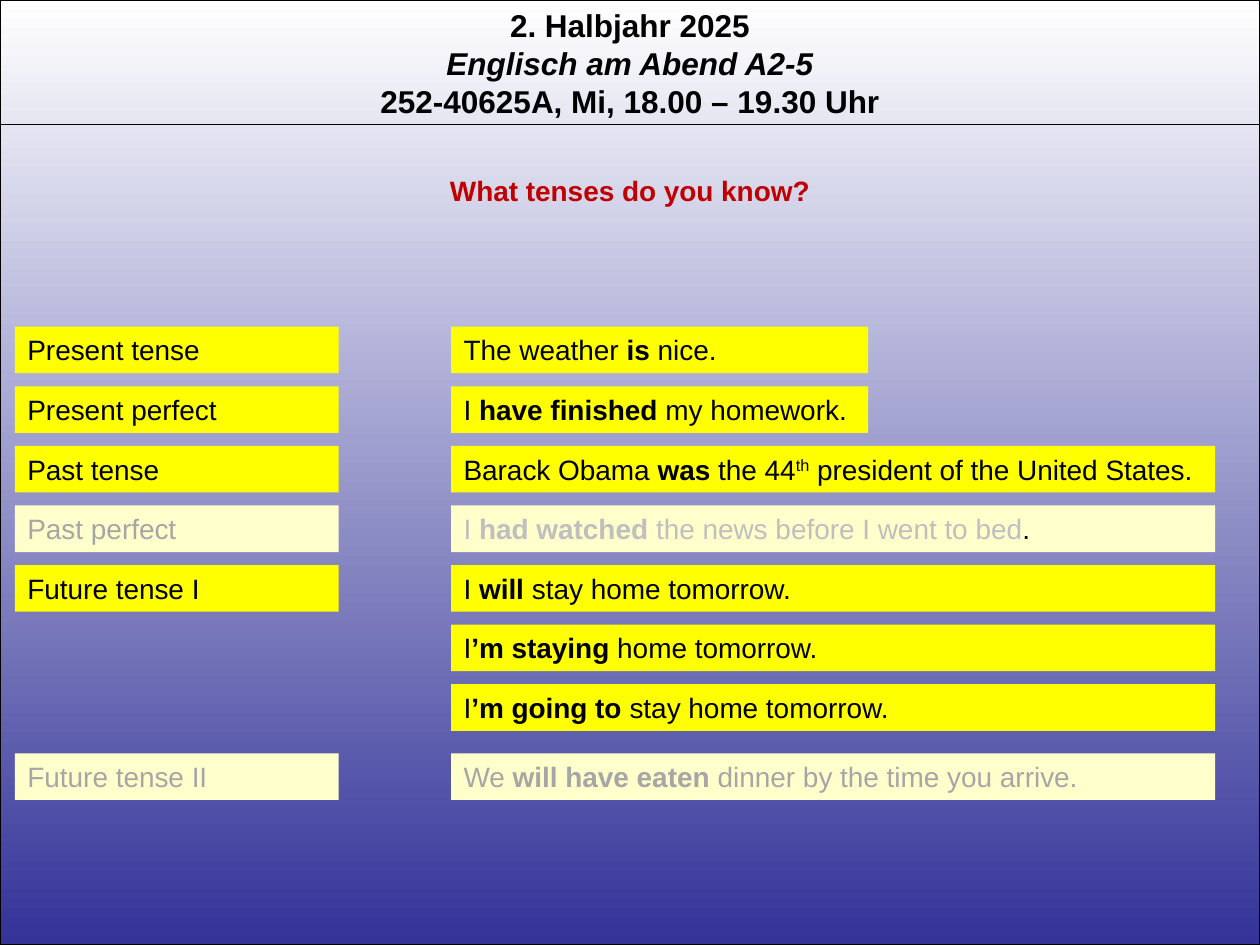
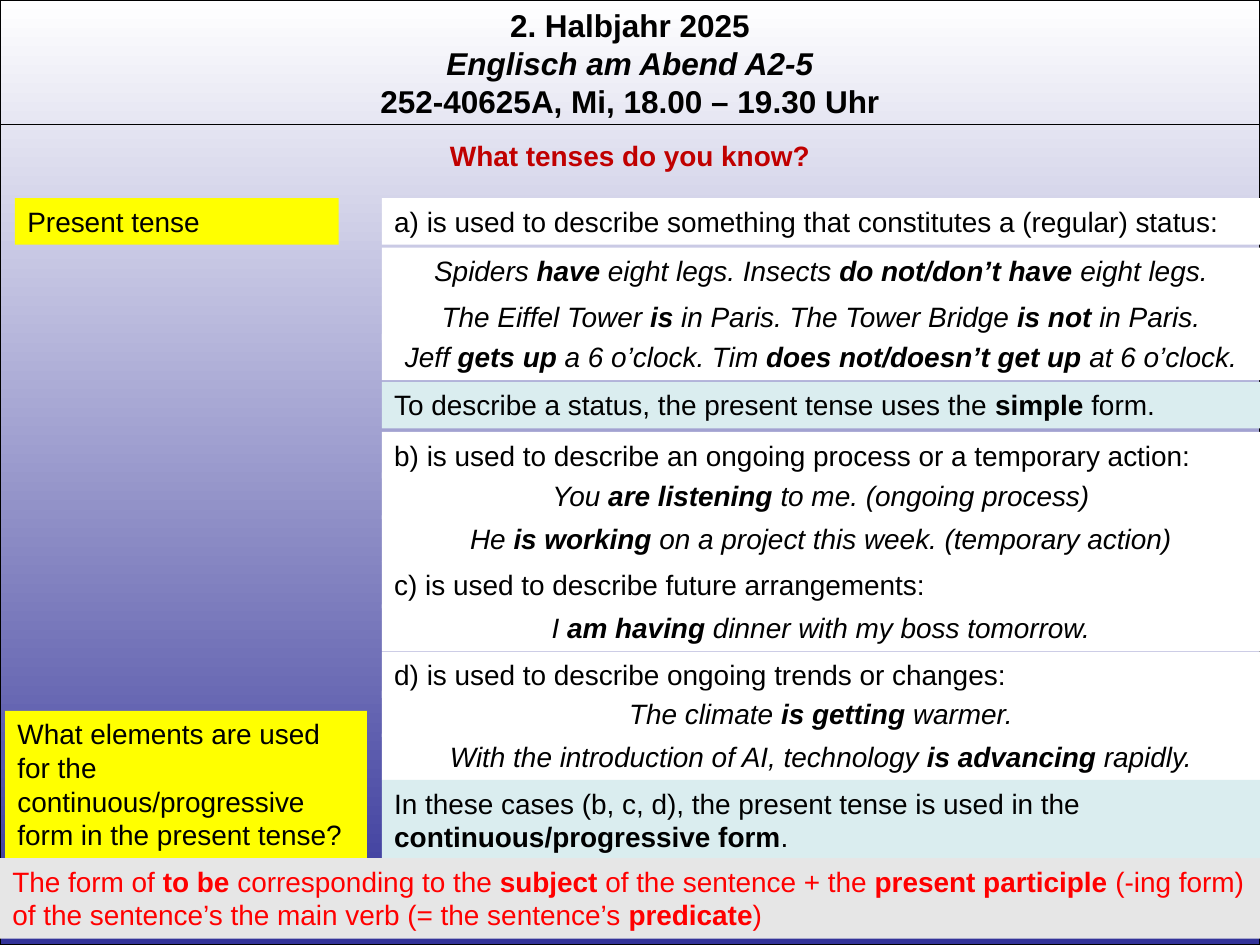
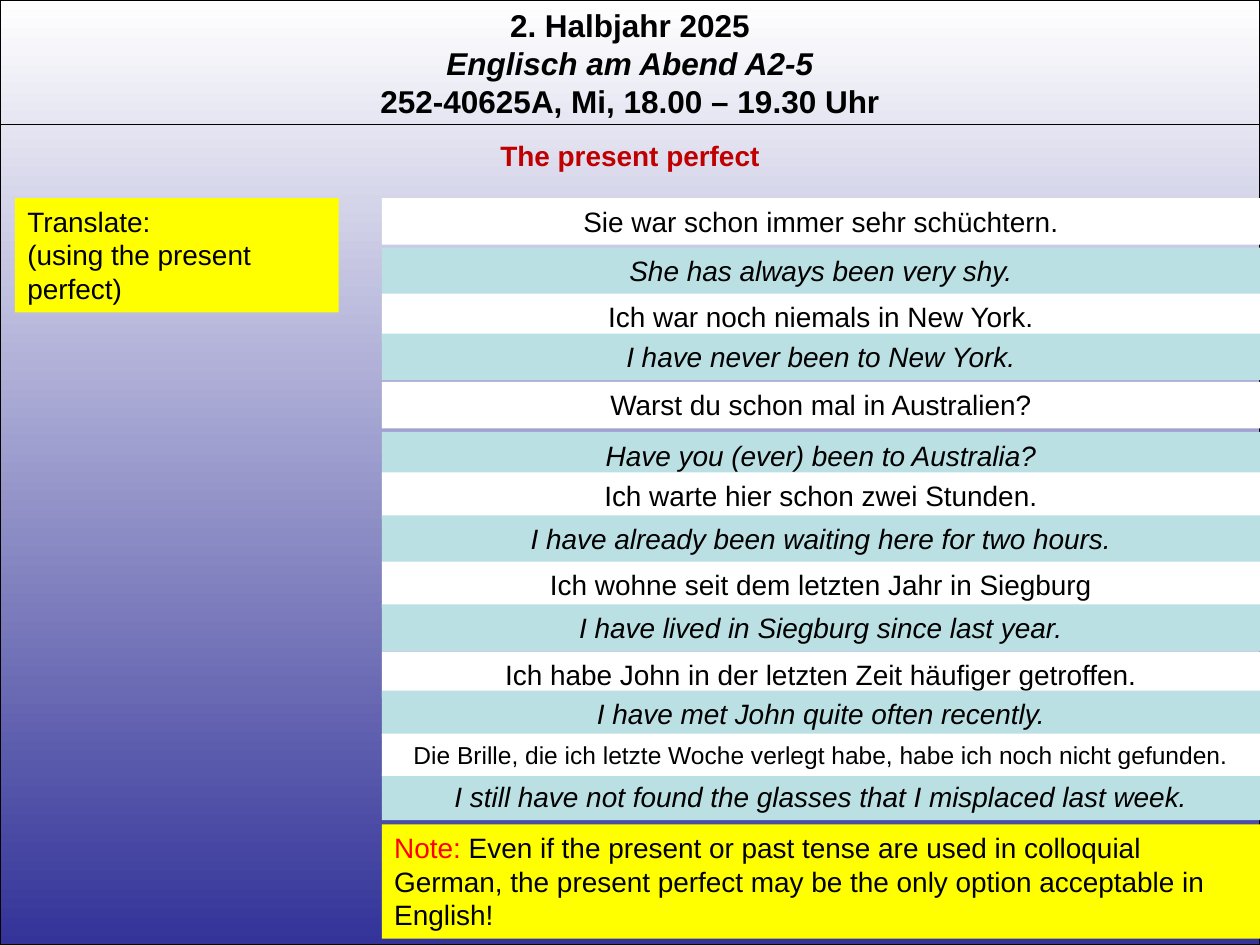
"""Build three slides about English tenses for an evening class."""
from dataclasses import dataclass
from typing import Iterator, Optional

from lxml import etree
from pptx import Presentation
from pptx import util as u
from pptx.dml.color import RGBColor
from pptx.enum import shapes, text
from pptx.oxml.ns import qn
from pptx.slide import Slide

WIDTH, HEIGHT = 720, 540
FONT = "Arial"
BLACK, WHITE, RED, DARK_RED = "000000", "FFFFFF", "FF0000", "C00000"
NAVY, YELLOW, PALE_YELLOW = "333399", "FFFF00", "FFFFCC"
GREY, LIGHT_GREY, SILVER = "A6A6A6", "BFBFBF", "E6E6E6"
TEAL, PALE_TEAL = "BBE0E3", "DAEDEF"
BOLD, RAISED, ACCENT = "*", "^", "~"

ONE_LINE, TWO_LINES, THREE_LINES, FOUR_LINES = 26.65, 46.05, 65.4, 84.8
LABEL_LEFT, LABEL_WIDTH = 8.6, 185
EXAMPLE_LEFT, SHORT_EXAMPLE, LONG_EXAMPLE = 257.8, 238.3, 436.5
FIRST_TENSE_TOP, TENSE_STEP, LAST_TENSE_TOP = 186.7, 34.05, 430.5
RULE_LEFT, RULE_WIDTH = 218.2, 501.8
RULE_TOPS = (113.2, 141.6, 167.8, 190.6, 218.2, 246.8, 270, 294.5,
             321, 345.4, 372.2, 394.7, 419.2)
COURSE = "2. Halbjahr 2025\nEnglisch am Abend A2-5\n252-40625A, Mi, 18.00 – 19.30 Uhr"


@dataclass(frozen=True)
class Box:
    """A text panel; marks in the wording switch bold, raised and accent."""

    left: float
    top: float
    width: float
    height: float
    wording: str
    fill: Optional[str] = YELLOW
    color: str = BLACK
    accent: str = BLACK
    size: float = 16
    centred: bool = False
    bold: bool = False
    italic: bool = False


@dataclass(frozen=True)
class Tense:
    """A tense name with its example sentence."""

    name: str
    example: str
    width: float = LONG_EXAMPLE
    faded: Optional[str] = None


@dataclass(frozen=True)
class Rule:
    """A row of the right-hand column."""

    wording: str
    fill: str = WHITE
    centred: bool = True
    italic: bool = False
    size: float = 16


TENSES = (
    Tense("Present tense", "The weather *is* nice.", SHORT_EXAMPLE),
    Tense("Present perfect", "I *have finished *my homework.", SHORT_EXAMPLE),
    Tense("Past tense", "Barack Obama *was* the 44^th^ president of the United States."),
    Tense("Past perfect", "I *had watched *the news before I went to bed~.", faded=LIGHT_GREY),
    Tense("Future tense I", "I *will *stay home tomorrow."),
    Tense("", "I*’m staying *home tomorrow."),
    Tense("", "I*’m going to *stay home tomorrow."),
    Tense("Future tense II", "We *will have eaten *dinner by the time you arrive.", faded=GREY),
)


def use(wording: str) -> Rule:
    """Describe a use of the present tense."""
    return Rule(wording, centred=False)


def example(wording: str) -> Rule:
    """Describe an example of a use."""
    return Rule(wording, italic=True)


USES = (
    use("a) is used to describe something that constitutes a (regular) status:"),
    example("Spiders *have* eight legs. Insects *do not/don’t have *eight legs."),
    example("The Eiffel Tower *is* in Paris. The Tower Bridge *is not *in Paris."),
    example("Jeff *gets up *a 6 o’clock. Tim *does not/doesn’t get up *at 6 o’clock."),
    Rule("To describe a status, the present tense uses the *simple* form.", PALE_TEAL, False),
    use("b) is used to describe an ongoing process or a temporary action:"),
    example("You *are listening *to me. (ongoing process)"),
    example("He *is working *on a project this week. (temporary action)"),
    use("c) is used to describe future arrangements:"),
    example("I *am having *dinner with my boss tomorrow."),
    use("d) is used to describe ongoing trends or changes:"),
    example("The climate *is getting *warmer."),
    example("With the introduction of AI, technology *is advancing *rapidly."),
)

TRANSLATIONS = (
    ("Sie war schon immer sehr schüchtern.", "She has always been very shy."),
    ("Ich war noch niemals in New York.", "I have never been to New York."),
    ("Warst du schon mal in Australien?", "Have you (ever) been to Australia?"),
    ("Ich warte hier schon zwei Stunden.", "I have already been waiting here for two hours."),
    ("Ich wohne seit dem letzten Jahr in Siegburg", "I have lived in Siegburg since last year."),
    ("Ich habe John in der letzten Zeit häufiger getroffen.",
     "I have met John quite often recently."),
)
LAST_GERMAN = "Die Brille, die ich letzte Woche verlegt habe, habe ich noch nicht gefunden."
LAST_ENGLISH = "I still have not found the glasses that I misplaced last week."


def rgb(color: str) -> RGBColor:
    """Turn a hex string into a colour."""
    return RGBColor.from_string(color)


def split_marks(line: str) -> Iterator[tuple[str, set[str]]]:
    """Yield each stretch of a line with the marks active on it."""
    active: set[str] = set()
    stretch = ""
    for char in line + BOLD:
        if char not in (BOLD, RAISED, ACCENT):
            stretch += char
            continue
        if stretch:
            yield stretch, set(active)
        stretch = ""
        active ^= {char}


def draw_box(page: Slide, box: Box) -> text:
    """Draw a panel, or plain text when it has no fill, and return its frame."""
    bounds = [u.Pt(n) for n in (box.left, box.top, box.width, box.height)]
    if box.fill:
        shape = page.shapes.add_shape(shapes.MSO_SHAPE.RECTANGLE, *bounds)
        shape.shadow.inherit = False
        shape.fill.solid()
        shape.fill.fore_color.rgb = rgb(box.fill)
        shape.line.fill.background()
    else:
        shape = page.shapes.add_textbox(*bounds)
    frame = shape.text_frame
    frame.word_wrap = True
    frame.auto_size = text.MSO_AUTO_SIZE.SHAPE_TO_FIT_TEXT
    frame.vertical_anchor = text.MSO_ANCHOR.TOP
    frame.text = "\n".join("" for _ in box.wording.split("\n"))
    for para, line in zip(frame.paragraphs, box.wording.split("\n")):
        para.alignment = text.PP_ALIGN.CENTER if box.centred else text.PP_ALIGN.LEFT
        for wording, marks in split_marks(line):
            span = para.add_run()
            span.text = wording
            span.font.name = FONT
            span.font.size = u.Pt(box.size)
            span.font.bold = box.bold or BOLD in marks
            span.font.italic = box.italic
            span.font.color.rgb = rgb(box.accent if ACCENT in marks else box.color)
            if RAISED in marks:
                span._r.get_or_add_rPr().set("baseline", "30000")
    return frame


def add_page(deck: Presentation, heading: str, heading_top: float) -> Slide:
    """Add a slide with the gradient, the course header and a heading."""
    page = deck.slides.add_slide(deck.slide_layouts[6])
    backdrop = page.shapes.add_shape(
        shapes.MSO_SHAPE.RECTANGLE, 0, 0, u.Pt(WIDTH), u.Pt(HEIGHT))
    backdrop.shadow.inherit = False
    backdrop.fill.gradient()
    backdrop.fill.gradient_angle = 270
    for stop, color in zip(backdrop.fill.gradient_stops, (WHITE, NAVY)):
        stop.color.rgb = rgb(color)
    header = draw_box(page, Box(0, 0, WIDTH, 72.7, COURSE, None, size=18,
                                centred=True, bold=True))
    header.paragraphs[1].runs[0].font.italic = True
    divider = page.shapes.add_connector(
        shapes.MSO_CONNECTOR.STRAIGHT, 0, u.Pt(71.3), u.Pt(WIDTH), u.Pt(71.3))
    etree.SubElement(divider._element.spPr, qn("a:effectLst"))
    for outline in (backdrop.line, divider.line):
        outline.color.rgb = rgb(BLACK)
        outline.width = u.Pt(0.75)
    draw_box(page, Box(0, heading_top, WIDTH, ONE_LINE, heading, None, DARK_RED,
                       centred=True, bold=True))
    return page


def draw_rule(page: Slide, top: float, rule: Rule, height: float = ONE_LINE) -> None:
    """Draw one row of the right-hand column."""
    draw_box(page, Box(RULE_LEFT, top, RULE_WIDTH, height, rule.wording, rule.fill,
                       size=rule.size, centred=rule.centred, italic=rule.italic))


def draw_label(page: Slide, top: float, wording: str, height: float = ONE_LINE,
               fill: str = YELLOW, color: str = BLACK) -> None:
    """Draw a label in the left-hand column."""
    draw_box(page, Box(LABEL_LEFT, top, LABEL_WIDTH, height, wording, fill, color))


def build_overview(deck: Presentation) -> None:
    """Build the list of tenses with examples."""
    page = add_page(deck, "What tenses do you know?", 95.9)
    for index, tense in enumerate(TENSES):
        is_last = index == len(TENSES) - 1
        top = LAST_TENSE_TOP if is_last else FIRST_TENSE_TOP + index * TENSE_STEP
        fill = PALE_YELLOW if tense.faded else YELLOW
        if tense.name:
            draw_label(page, top, tense.name, fill=fill, color=GREY if tense.faded else BLACK)
        draw_box(page, Box(EXAMPLE_LEFT, top, tense.width, ONE_LINE, tense.example,
                           fill, tense.faded or BLACK))


def build_present(deck: Presentation) -> None:
    """Build the uses of the present tense."""
    page = add_page(deck, "What tenses do you know?", 75.8)
    draw_label(page, RULE_TOPS[0], "Present tense")
    for top, rule in zip(RULE_TOPS, USES):
        draw_rule(page, top, rule)
    summary = ("In these cases (b, c, d), the present tense is used in the "
               "*continuous/progressive form*.")
    draw_rule(page, 445.7, Rule(summary, PALE_TEAL, False), TWO_LINES)
    draw_box(page, Box(2.9, 406.2, 206.8, FOUR_LINES,
                       "What elements are used for the continuous/progressive "
                       "form in the present tense?"))
    draw_box(page, Box(0, 490.3, 723, TWO_LINES,
                       "The form of *to be *corresponding to the *subject* of the sentence + "
                       "the *present participle *(-ing form) of the sentence’s the main verb "
                       "(= the sentence’s *predicate*)", SILVER, RED))


def build_perfect(deck: Presentation) -> None:
    """Build the translation exercise on the present perfect."""
    page = add_page(deck, "The present perfect", 75.8)
    draw_label(page, RULE_TOPS[0], "Translate:\n(using the present perfect)", THREE_LINES)
    for index, (german, english) in enumerate(TRANSLATIONS):
        draw_rule(page, RULE_TOPS[2 * index], Rule(german))
        draw_rule(page, RULE_TOPS[2 * index + 1], Rule(english, TEAL, italic=True))
    draw_rule(page, 442, Rule(LAST_ENGLISH, TEAL, italic=True))
    draw_rule(page, RULE_TOPS[-1], Rule(LAST_GERMAN, size=14), 24.2)
    draw_box(page, Box(RULE_LEFT, 471, RULE_WIDTH, THREE_LINES,
                       "~Note: ~Even if the present or past tense are used in colloquial German, "
                       "the present perfect may be the only option acceptable in English!",
                       accent=RED))


def main() -> None:
    """Build and save the deck."""
    deck = Presentation()
    deck.slide_width, deck.slide_height = u.Pt(WIDTH), u.Pt(HEIGHT)
    build_overview(deck)
    build_present(deck)
    build_perfect(deck)
    deck.save("out.pptx")


if __name__ == "__main__":
    main()
